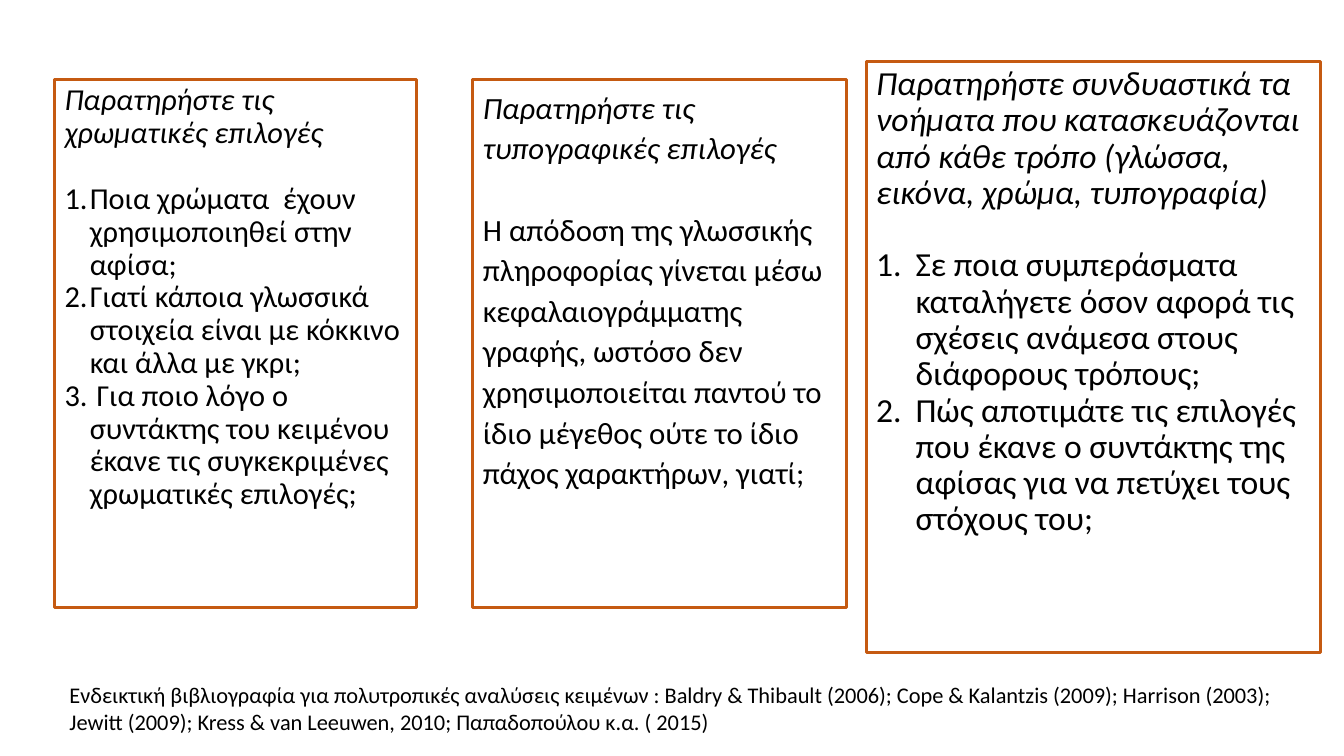
from lxml.etree import SubElement
from pptx import Presentation
from pptx.dml.color import RGBColor
from pptx.enum.text import MSO_ANCHOR, MSO_AUTO_SIZE, PP_ALIGN
from pptx.oxml.ns import qn
from pptx.util import Inches, Pt

ORANGE = RGBColor(0xC5, 0x5A, 0x11)
BLACK = RGBColor(0, 0, 0)
FONT = "Calibri"
LINE_HEIGHT = 1.2  # single line, as a share of the font size


def set_list_style(p, indent, numbered):
    """Give the paragraph a hanging indent and a number, or no bullet."""
    pPr = p._p.get_or_add_pPr()
    pPr.set("marL", str(Inches(indent)))
    pPr.set("indent", str(-Inches(indent)))
    if numbered:
        SubElement(pPr, qn("a:buFont"), typeface=FONT)
        SubElement(pPr, qn("a:buAutoNum"), type="arabicPeriod")
    else:
        SubElement(pPr, qn("a:buNone"))


def style_run(r, size, italic=False):
    r.font.name = FONT
    r.font.size = Pt(size)
    r.font.bold = False
    r.font.italic = italic
    r.font.color.rgb = BLACK


prs = Presentation()
prs.slide_width, prs.slide_height = Inches(13.33), Inches(7.5)
s = prs.slides.add_slide(prs.slide_layouts.get_by_name("Comparison"))
bodies = {ph.placeholder_format.idx: ph for ph in s.placeholders}

# placeholder, (left, top, width, height), size, line spacing, indent, heading, items
boxes = [
    (1, (0.54, 0.79, 3.59, 5.24), 21.7, 0.9, 0.25,
     "Παρατηρήστε τις χρωματικές επιλογές",
     ["Ποια χρώματα  έχουν χρησιμοποιηθεί στην αφίσα;",
      "Γιατί κάποια γλωσσικά στοιχεία είναι με κόκκινο και άλλα με γκρι;",
      " Για ποιο λόγο ο συντάκτης του κειμένου έκανε τις συγκεκριμένες "
      "χρωματικές επιλογές;"]),
    (2, (4.69, 0.79, 3.71, 5.24), 22, 1.1, 0,
     "Παρατηρήστε τις τυπογραφικές επιλογές",
     ["Η απόδοση της γλωσσικής πληροφορίας γίνεται μέσω κεφαλαιογράμματης "
      "γραφής, ωστόσο δεν χρησιμοποιείται παντού το ίδιο μέγεθος ούτε το "
      "ίδιο πάχος χαρακτήρων, γιατί;"]),
    (4, (8.59, 0.61, 4.51, 5.86), 24, 0.9, 0.39,
     "Παρατηρήστε συνδυαστικά τα νοήματα που κατασκευάζονται από κάθε τρόπο "
     "(γλώσσα, εικόνα, χρώμα, τυπογραφία)",
     ["Σε ποια συμπεράσματα καταλήγετε όσον αφορά τις σχέσεις ανάμεσα στους "
      "διάφορους τρόπους;",
      "Πώς αποτιμάτε τις επιλογές που έκανε ο συντάκτης της αφίσας για να "
      "πετύχει τους στόχους του;"]),
]

for idx, place, size, spacing, indent, heading, items in boxes:
    body = bodies.pop(idx)
    body.left, body.top, body.width, body.height = map(Inches, place)
    body.line.color.rgb = ORANGE
    body.line.width = Pt(2.25)
    tf = body.text_frame
    tf.text = "\n".join([heading] + items)
    tf.word_wrap = True
    tf.auto_size = MSO_AUTO_SIZE.NONE
    tf.vertical_anchor = MSO_ANCHOR.TOP
    for n, p in enumerate(tf.paragraphs):
        numbered = n > 0 and indent > 0
        set_list_style(p, indent if numbered else 0, numbered)
        p.alignment = PP_ALIGN.LEFT
        p.line_spacing = spacing
        # one line of space sets the heading apart from what follows
        p.space_before = Pt(round(size * LINE_HEIGHT * spacing, 1) if n == 1 else 0)
        p.space_after = Pt(0)
        style_run(p.runs[0], size, italic=n == 0)

for unused in bodies.values():
    unused.element.getparent().remove(unused.element)

references = s.shapes.add_textbox(Inches(0.59), Inches(6.71), Inches(12.15), Inches(0.64))
tf = references.text_frame
tf.word_wrap = True
tf.auto_size = MSO_AUTO_SIZE.SHAPE_TO_FIT_TEXT
tf.text = (
    "Ενδεικτική βιβλιογραφία για πολυτροπικές αναλύσεις κειμένων : "
    "Baldry & Thibault (2006); Cope & Kalantzis (2009); Harrison (2003); "
    "Jewitt (2009); Kress & van Leeuwen, 2010; Παπαδοπούλου κ.α. ( 2015)"
)
style_run(tf.paragraphs[0].runs[0], 16)

prs.save("out.pptx")
